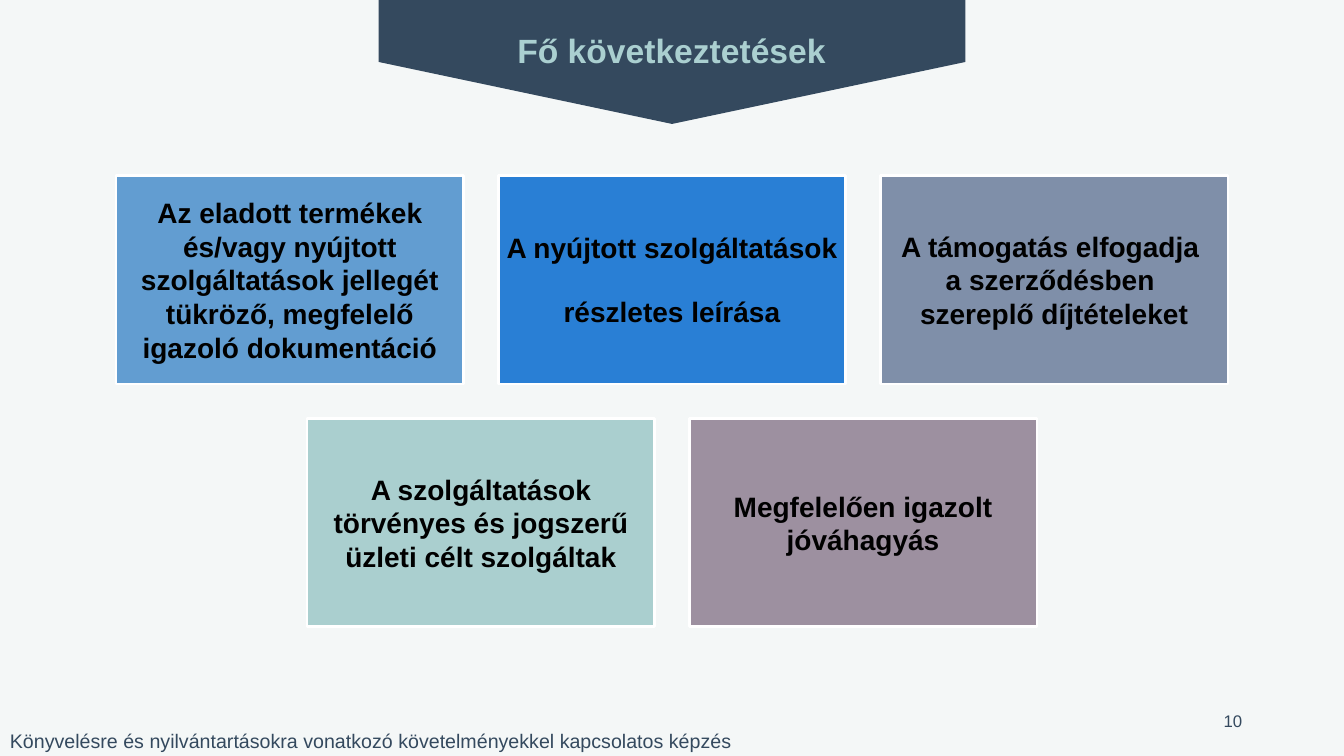
"""Build the slide of main conclusions: a banner title over five cards."""
from pptx import Presentation
from pptx.dml.color import RGBColor
from pptx.enum.shapes import MSO_SHAPE
from pptx.enum.text import MSO_ANCHOR, MSO_AUTO_SIZE, PP_ALIGN
from pptx.util import Inches, Pt

TITLE = "Fő következtetések"
FOOTER = "Könyvelésre és nyilvántartásokra vonatkozó követelményekkel kapcsolatos képzés"
NUMBER = "10"
ROWS = [
    [
        ("629DD1", ["Az eladott termékek és/vagy nyújtott szolgáltatások "
                    "jellegét tükröző, megfelelő igazoló dokumentáció"]),
        ("297FD5", ["A nyújtott szolgáltatások ", "részletes leírása"]),
        ("7F8FA9", ["A támogatás elfogadja ", "a szerződésben ",
                    "szereplő díjtételeket"]),
    ],
    [
        ("AACFCF", ["A szolgáltatások törvényes és jogszerű üzleti célt szolgáltak"]),
        ("9D90A0", ["Megfelelően igazolt jóváhagyás"]),
    ],
]
PAPER, NAVY, MINT, WHITE, BLACK = "F4F7F7", "34495E", "AACFD0", "FFFFFF", "000000"
WIDE, HIGH = 13.33, 7.5
CARD_W, CARD_H, GAP, TOP = 3.45, 2.07, 0.34, 1.74
BAN_W, BAN_H = 5.82, 1.23


def paint(color, code):
    """Set a colour from a hex string."""
    color.rgb = RGBColor.from_string(code)


def fill(shape, code):
    """Give a shape a solid fill and no shadow."""
    shape.shadow.inherit = False
    shape.fill.solid()
    paint(shape.fill.fore_color, code)


def write(shape, lines, size, code, bold=False, align=PP_ALIGN.LEFT,
          anchor=MSO_ANCHOR.TOP, inset=(0.1, 0.05)):
    """Write lines as runs of one paragraph."""
    frame = shape.text_frame
    frame.auto_size = MSO_AUTO_SIZE.NONE
    frame.word_wrap = True
    frame.vertical_anchor = anchor
    frame.margin_left = frame.margin_right = Inches(inset[0])
    frame.margin_top = frame.margin_bottom = Inches(inset[1])
    para = frame.paragraphs[0]
    para.alignment = align
    for i, line in enumerate(lines):
        if i:
            para.add_line_break()
        run = para.add_run()
        run.text = line
        run.font.name = "Arial"
        run.font.size = Pt(size)
        run.font.bold = bold
        paint(run.font.color, code)


def add_banner(slide):
    """Add the downward banner and put the title on it."""
    banner = slide.shapes.add_shape(
        MSO_SHAPE.PENTAGON, Inches((WIDE - BAN_H) / 2), Inches((BAN_H - BAN_W) / 2),
        Inches(BAN_H), Inches(BAN_W))
    banner.rotation = 90
    fill(banner, NAVY)
    banner.line.fill.background()
    title = slide.shapes.title
    title.left, title.top = Inches(2.97), Inches(0.25)
    title.width, title.height = Inches(7.38), Inches(0.5)
    write(title, [TITLE], 24, MINT, True, PP_ALIGN.CENTER)
    banner._element.addnext(title._element)


def add_cards(slide):
    """Add the cards, each row centred on the slide."""
    for r, row in enumerate(ROWS):
        left = (WIDE - len(row) * CARD_W - (len(row) - 1) * GAP) / 2
        for c, (code, lines) in enumerate(row):
            card = slide.shapes.add_shape(
                MSO_SHAPE.RECTANGLE, Inches(left + c * (CARD_W + GAP)),
                Inches(TOP + r * (CARD_H + GAP)), Inches(CARD_W), Inches(CARD_H))
            fill(card, code)
            paint(card.line.color, WHITE)
            card.line.width = Pt(2)
            write(card, lines, 20, BLACK, True, PP_ALIGN.CENTER,
                  MSO_ANCHOR.MIDDLE, (0.08, 0.08))


def main():
    """Build and save the slide."""
    deck = Presentation()
    deck.slide_width, deck.slide_height = Inches(WIDE), Inches(HIGH)
    slide = deck.slides.add_slide(deck.slide_layouts[5])
    slide.background.fill.solid()
    paint(slide.background.fill.fore_color, PAPER)
    foot = slide.shapes.add_textbox(Inches(0), Inches(7.18), Inches(7.5), Inches(0.34))
    write(foot, [FOOTER], 14, NAVY)
    add_banner(slide)
    page = slide.shapes.add_textbox(Inches(9.42), Inches(6.95), Inches(3), Inches(0.4))
    write(page, [NUMBER], 12, NAVY, align=PP_ALIGN.RIGHT, anchor=MSO_ANCHOR.MIDDLE)
    add_cards(slide)
    deck.save("out.pptx")


if __name__ == "__main__":
    main()
